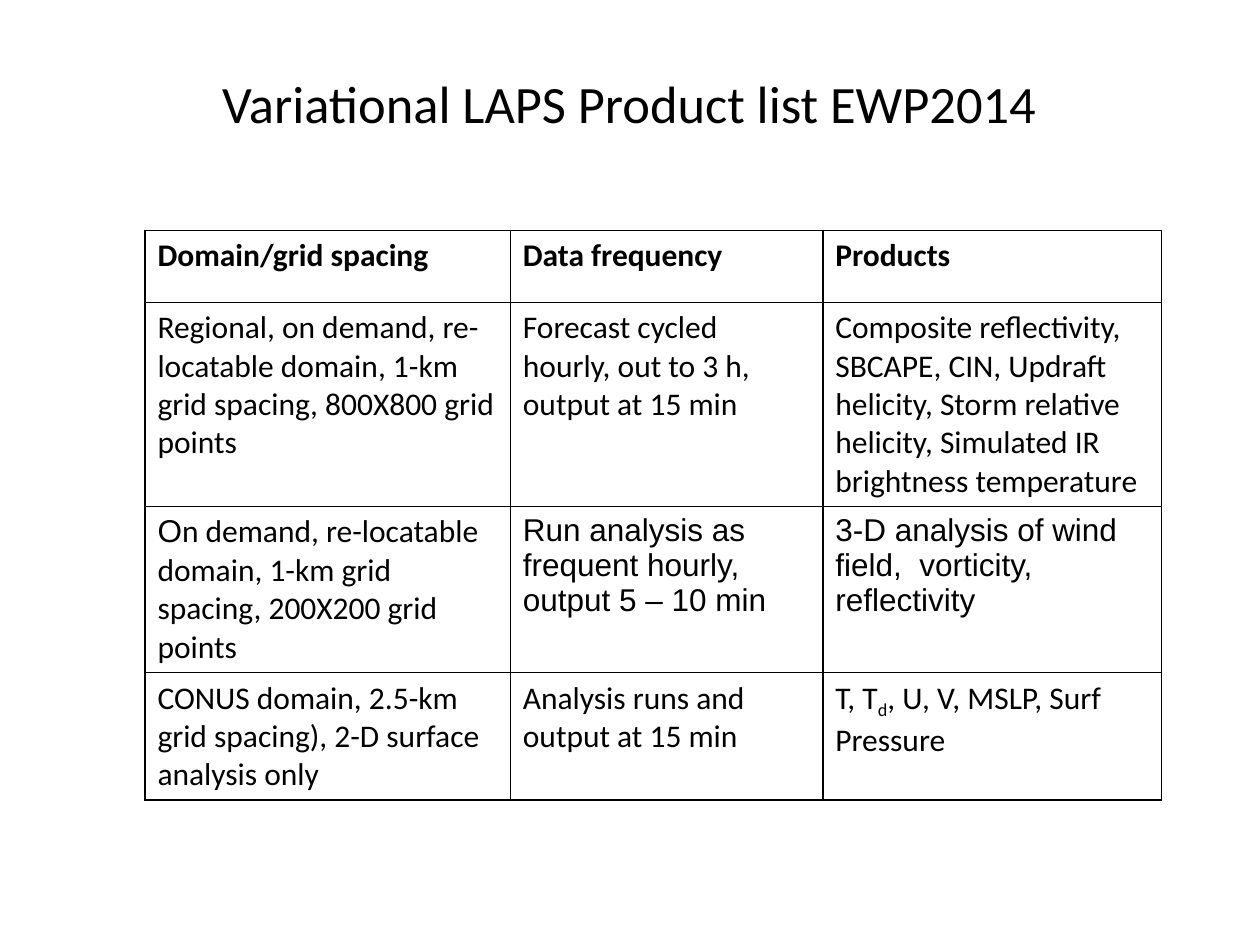
import pptx
import pptx.util
import pptx.dml.color
import pptx.enum.text
import lxml.etree
from pptx.oxml.ns import qn

Inches, Pt = pptx.util.Inches, pptx.util.Pt


def style(run, size, font, bold=False, tint="000000"):
    run.font.size = Pt(size)
    run.font.name = font
    run.font.bold = bold
    run.font.color.rgb = pptx.dml.color.RGBColor.from_string(tint)


def border(cell, tint="000000"):
    props = cell._tc.get_or_add_tcPr()
    for place, side in enumerate(("lnL", "lnR", "lnT", "lnB")):
        line = lxml.etree.Element(qn("a:" + side), w=str(Pt(1)))
        fill = lxml.etree.SubElement(line, qn("a:solidFill"))
        lxml.etree.SubElement(fill, qn("a:srgbClr"), val=tint)
        props.insert(place, line)


deck = pptx.Presentation()
deck.slide_width, deck.slide_height = Inches(10), Inches(7.5)
slide = deck.slides.add_slide(deck.slide_layouts[6])

# Title
title = slide.shapes.add_textbox(Inches(1.04), Inches(0.3), Inches(7.91), Inches(1.03))
frame = title.text_frame
frame.word_wrap = True
frame.vertical_anchor = pptx.enum.text.MSO_ANCHOR.MIDDLE
frame.text = "Variational LAPS Product list EWP2014"
frame.paragraphs[0].alignment = pptx.enum.text.PP_ALIGN.CENTER
style(frame.paragraphs[0].runs[0], 30, "Calibri")

# Product table: a cell is a list of text pieces
cols = [2.9, 2.48, 2.69]
rows = [0.57, 1.62, 1.32, 1.01]
cells = [
    [["Domain/grid spacing"], ["Data frequency"], ["Products"]],
    [["Regional, on demand, re-locatable domain, 1-km grid spacing, 800X800 grid points"],
     ["Forecast cycled hourly, out to 3 h, output at 15 min"],
     ["Composite reflectivity, SBCAPE, CIN, Updraft helicity, Storm relative helicity, "
      "Simulated IR brightness temperature"]],
    [["O", "n demand, re-locatable domain, 1-km grid spacing, 200X200 grid points"],
     ["Run analysis as frequent hourly, output 5 – 10 min"],
     ["3-D analysis of wind field,  vorticity, reflectivity"]],
    [["CONUS domain, 2.5-km grid spacing), 2-D surface analysis only"],
     ["Analysis runs and output at 15 min"],
     ["T, T", "d", ", U, V, MSLP, Surf Pressure"]],
]
arial = {(2, 0, 0), (2, 1, 0), (2, 2, 0)}  # row, column, piece
sub = (3, 2, 1)

table = slide.shapes.add_table(
    len(rows), len(cols), Inches(1.15), Inches(1.83),
    Inches(sum(cols)), Inches(sum(rows))).table
table.first_row = table.horz_banding = False
for col, width in zip(table.columns, cols):
    col.width = Inches(width)
for row, height in zip(table.rows, rows):
    row.height = Inches(height)

for r, line in enumerate(cells):
    for c, parts in enumerate(line):
        cell = table.cell(r, c)
        cell.fill.background()
        border(cell)
        para = cell.text_frame.paragraphs[0]
        for n, part in enumerate(parts):
            run = para.add_run()
            run.text = part
            style(run, 18, "Arial" if (r, c, n) in arial else "Calibri", bold=r == 0)
            if (r, c, n) == sub:
                run.font._element.set("baseline", "-25000")

deck.save("out.pptx")
